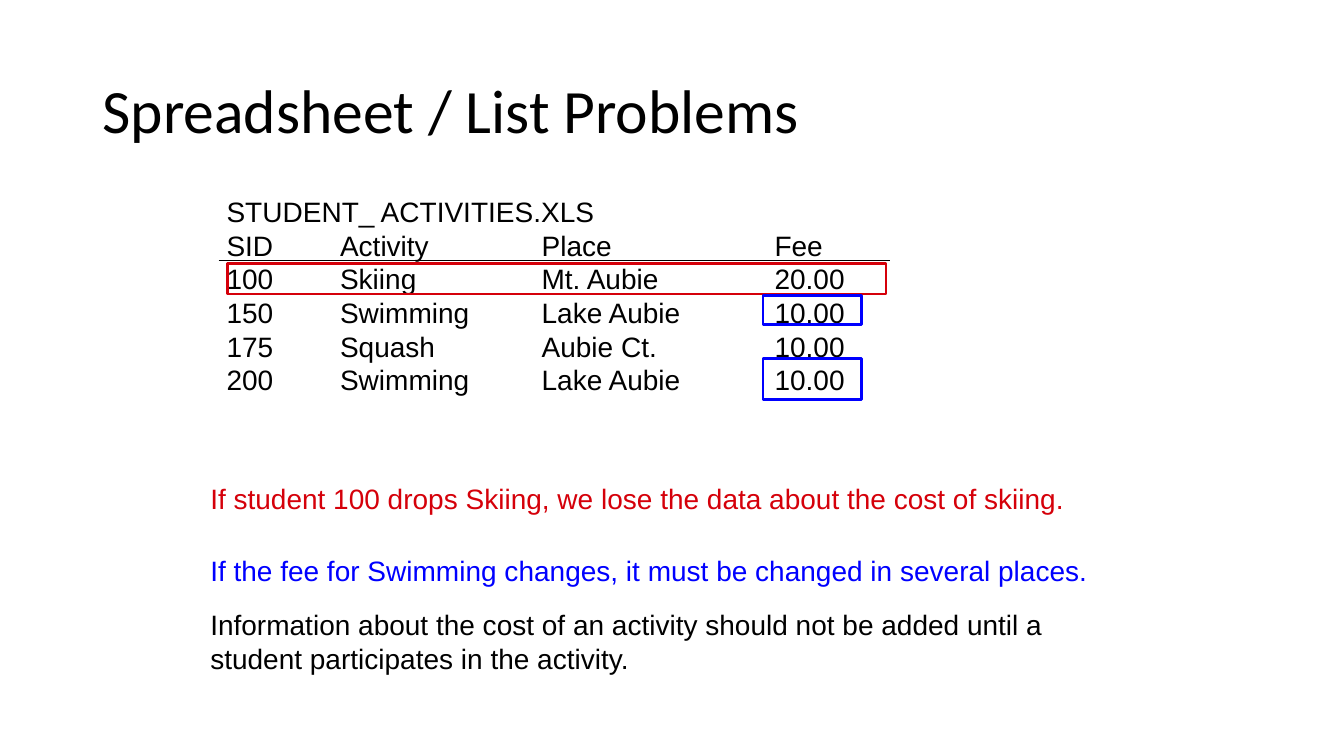
from typing import NamedTuple

from lxml.etree import SubElement
from pptx import Presentation
from pptx.dml.color import RGBColor
from pptx.enum.shapes import MSO_CONNECTOR, MSO_SHAPE
from pptx.enum.text import MSO_ANCHOR, MSO_AUTO_SIZE, PP_ALIGN
from pptx.oxml.ns import qn
from pptx.shapes.autoshape import Shape
from pptx.slide import Slide
from pptx.util import Cm, Pt

BLACK = RGBColor(0x00, 0x00, 0x00)
RED = RGBColor(0xD5, 0x00, 0x0A)
BLUE = RGBColor(0x00, 0x00, 0xFF)

ACTIVITIES = [
    ("STUDENT_ ACTIVITIES.XLS",),
    ("SID", "Activity", "Place", "Fee"),
    ("100", "Skiing", "Mt. Aubie", "20.00"),
    ("150", "Swimming", "Lake Aubie", "10.00"),
    ("175", "Squash", "Aubie Ct.", "10.00"),
    ("200", "Swimming", "Lake Aubie", "10.00"),
]
COLUMN_STOPS = (2.86, 7.94, 13.81)


class Box(NamedTuple):
    """Position and size in centimetres."""
    left: float
    top: float
    width: float
    height: float

    def lengths(self) -> list[Cm]:
        return [Cm(value) for value in self]


class Problem(NamedTuple):
    text: str
    box: Box
    color: RGBColor


class Highlight(NamedTuple):
    box: Box
    color: RGBColor


PROBLEMS = [
    Problem("If student 100 drops Skiing, we lose the data about the cost of skiing.",
            Box(5.05, 12.01, 23.32, 1.1), RED),
    Problem("Information about the cost of an activity should not be added until a "
            "student participates in the activity.",
            Box(5.05, 15.19, 23.67, 1.95), BLACK),
    Problem("If the fee for Swimming changes, it must be changed in several places.",
            Box(5.05, 13.82, 23.22, 1.1), BLUE),
]
HIGHLIGHTS = [
    Highlight(Box(5.74, 6.65, 16.59, 0.76), RED),
    Highlight(Box(19.23, 7.44, 2.49, 0.74), BLUE),
    Highlight(Box(19.23, 9.04, 2.49, 1.02), BLUE),
]


def add_text(slide: Slide, text: str, box: Box, color: RGBColor, wrap: bool = True) -> Shape:
    text_box = slide.shapes.add_textbox(*box.lengths())
    frame = text_box.text_frame
    frame.text = text
    frame.word_wrap = wrap
    frame.auto_size = MSO_AUTO_SIZE.SHAPE_TO_FIT_TEXT
    for paragraph in frame.paragraphs:
        for run in paragraph.runs:
            run.font.name = "Arial"
            run.font.size = Pt(20)
            run.font.color.rgb = color
    return text_box


def set_column_stops(text_box: Shape) -> None:
    for paragraph in text_box.text_frame.paragraphs:
        properties = paragraph._p.get_or_add_pPr()
        stops = SubElement(properties, qn("a:tabLst"))
        for stop in COLUMN_STOPS:
            SubElement(stops, qn("a:tab"), pos=str(Cm(stop)), algn="l")


def add_highlight(slide: Slide, highlight: Highlight) -> None:
    frame = slide.shapes.add_shape(MSO_SHAPE.RECTANGLE, *highlight.box.lengths())
    frame.shadow.inherit = False
    frame.fill.background()
    frame.line.color.rgb = highlight.color
    frame.line.width = Pt(2)


def set_title(slide: Slide) -> None:
    title = slide.shapes.title
    title.left, title.top, title.width, title.height = Box(2.33, 1.01, 29.21, 3.68).lengths()
    title.text_frame.text = "Spreadsheet / List Problems"
    title.text_frame.vertical_anchor = MSO_ANCHOR.MIDDLE
    heading = title.text_frame.paragraphs[0]
    heading.alignment = PP_ALIGN.LEFT
    heading.line_spacing = 0.9
    font = heading.runs[0].font
    font.name = "Calibri"
    font.size = Pt(44)
    font.color.rgb = BLACK


def main() -> None:
    presentation = Presentation()
    presentation.slide_width = Cm(33.87)
    presentation.slide_height = Cm(19.05)
    slide = presentation.slides.add_slide(presentation.slide_layouts[5])
    set_title(slide)

    # Activity list with its header rule
    rows = "\n".join("\t".join(row) for row in ACTIVITIES)
    activity_list = add_text(slide, rows, Box(5.46, 4.78, 16.26, 5.38), BLACK, wrap=False)
    set_column_stops(activity_list)
    header_rule = slide.shapes.add_connector(
        MSO_CONNECTOR.STRAIGHT, Cm(5.51), Cm(6.56), Cm(22.43), Cm(6.56))
    header_rule.line.color.rgb = BLACK
    header_rule.line.width = Pt(1)
    SubElement(header_rule._element.spPr, qn("a:effectLst"))

    # Problems and the cells they concern
    for problem in PROBLEMS:
        add_text(slide, problem.text, problem.box, problem.color)
    for highlight in HIGHLIGHTS:
        add_highlight(slide, highlight)

    presentation.save("out.pptx")


if __name__ == "__main__":
    main()
